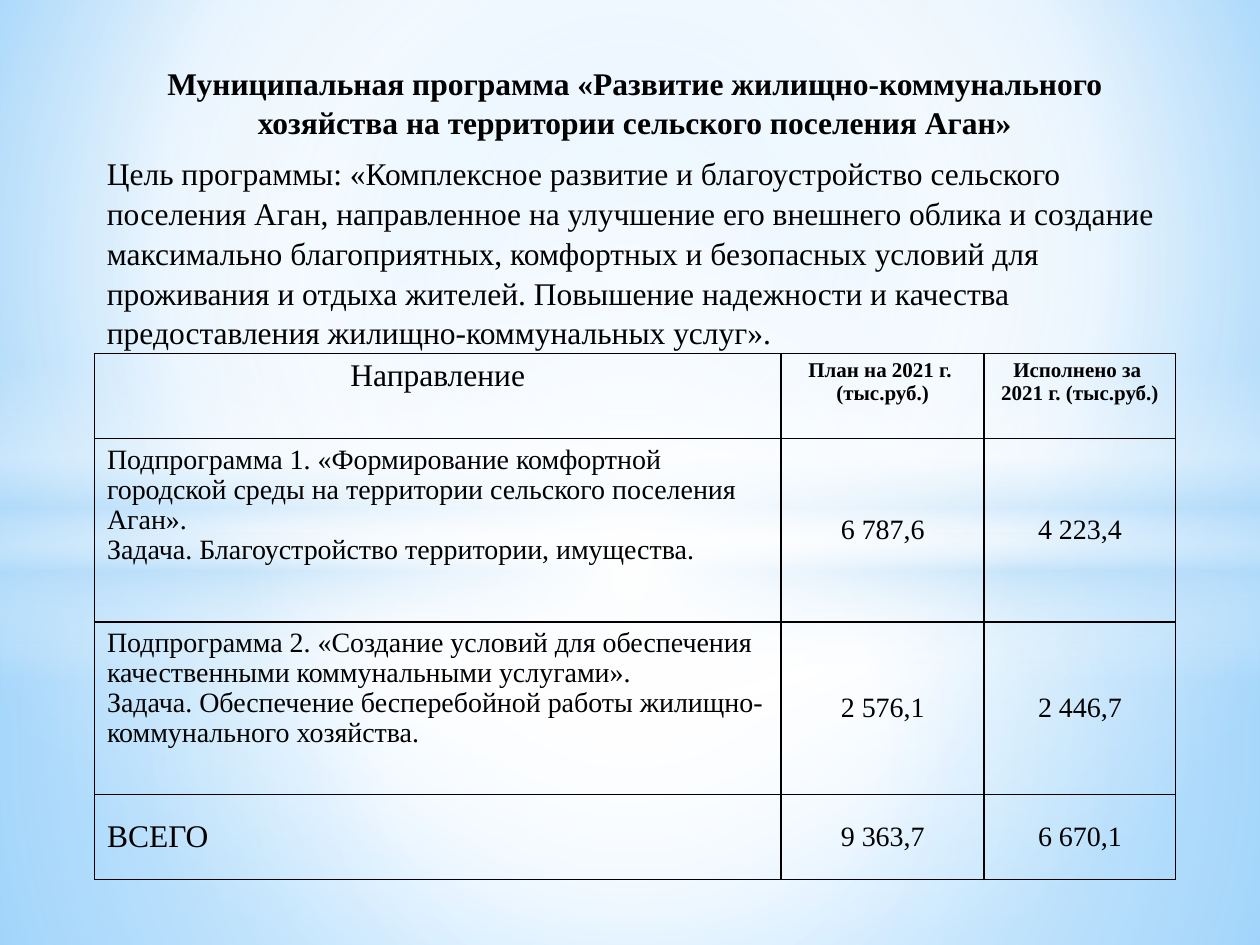
"""Builds the slide on the housing and utilities programme with its spending table."""
from lxml import etree
from pptx import Presentation
from pptx.dml.color import RGBColor
from pptx.enum.shapes import MSO_SHAPE
from pptx.enum.text import MSO_ANCHOR, PP_ALIGN
from pptx.oxml.ns import qn
from pptx.util import Pt

LEFT, CENTER = PP_ALIGN.LEFT, PP_ALIGN.CENTER
TOP, MIDDLE = MSO_ANCHOR.TOP, MSO_ANCHOR.MIDDLE
RECT, OVAL = MSO_SHAPE.RECTANGLE, MSO_SHAPE.OVAL
FONT, INK = "Times New Roman", "000000"

TITLE = ("Муниципальная программа «Развитие жилищно-коммунального хозяйства "
         "на территории сельского поселения Аган»")
GOAL = ("Цель программы: «Комплексное развитие и благоустройство сельского поселения Аган, "
        "направленное на улучшение его внешнего облика и создание максимально благоприятных, "
        "комфортных и безопасных условий для проживания и отдыха жителей. Повышение надежности "
        "и качества предоставления жилищно-коммунальных услуг».")

HEADER = [["Направление"],
          ["План на 2021 г. ", "(тыс.руб.)"],
          ["Исполнено за ", "2021 г. (тыс.руб.)"]]
PROGRAMMES = [
    [["Подпрограмма 1. «Формирование комфортной городской среды на территории "
      "сельского поселения Аган».",
      "Задача. Благоустройство территории, имущества."], ["6 787,6"], ["4 223,4"]],
    [["Подпрограмма 2. «Создание условий для обеспечения качественными "
      "коммунальными услугами».",
      "Задача. Обеспечение бесперебойной работы жилищно-коммунального хозяйства."],
     ["2 576,1"], ["2 446,7"]],
]
TOTAL = [["ВСЕГО"], ["9 363,7"], ["6 670,1"]]
ROWS = [HEADER, *PROGRAMMES, TOTAL]
COL_WIDTHS = [392.4, 116, 109.4]
ROW_HEIGHTS = [48.7, 104.6, 98.8, 48.4]

BACKGROUND = [(0, "9ED5FF", 100), (60, "FFFFFF", 100), (100, "5BB9FF", 100)]
MIDPOINT = (50, 50, 50, 50)
GLOWS = [
    (RECT, (0, 304.5, 720, 235.5),
     [(0, "FFFFFF", 91), (37, "FFFFFF", 76), (100, "B4DCFA", 79)], MIDPOINT),
    (RECT, (0, 0, 720, 304.5),
     [(0, "FFFFFF", 89), (48, "FFFFFF", 62), (100, "B4DCFA", 79)], MIDPOINT),
    (RECT, (0, 209, 720, 180),
     [(0, "FFFFFF", 0), (29, "FFFFFF", 30), (45, "B4DCFA", 40),
      (55, "FFFFFF", 26), (65, "B4DCFA", 60), (100, "FFFFFF", 0)], None),
    (OVAL, (0, 126, 720, 402), [(0, "FFFFFF", 100), (54, "FFFFFF", 0)], MIDPOINT),
]


def rgb(value):
    return RGBColor.from_string(value)


def sub(parent, tag, **attrs):
    return etree.SubElement(parent, qn(tag), {k: str(v) for k, v in attrs.items()})


def set_gradient(root, fill, stops, focus):
    fill.solid()
    solid = root.find(".//" + qn("a:solidFill"))
    grad = etree.Element(qn("a:gradFill"), rotWithShape="1")
    stop_list = sub(grad, "a:gsLst")
    for pos, color, alpha in stops:
        clr = sub(sub(stop_list, "a:gs", pos=pos * 1000), "a:srgbClr", val=color)
        if alpha < 100:
            sub(clr, "a:alpha", val=alpha * 1000)
    if focus:
        rect = {side: pct * 1000 for side, pct in zip("ltrb", focus)}
        sub(sub(grad, "a:path", path="circle"), "a:fillToRect", **rect)
    else:
        sub(grad, "a:lin", ang=90 * 60000, scaled=0)
    solid.getparent().replace(solid, grad)


def write(tf, texts, size, bold=False, align=LEFT, spacing=1.0):
    for i, text in enumerate(texts):
        p = tf.paragraphs[0] if i == 0 else tf.add_paragraph()
        p.alignment, p.line_spacing = align, spacing
        r = p.add_run()
        r.text = text
        r.font.name, r.font.size, r.font.bold = FONT, Pt(size), bold
        r.font.color.rgb = rgb(INK)


def set_borders(cell):
    tc_pr = cell._tc.get_or_add_tcPr()
    for tag in ("a:lnL", "a:lnR", "a:lnT", "a:lnB"):
        line = sub(tc_pr, tag, w=Pt(1))
        sub(sub(line, "a:solidFill"), "a:srgbClr", val=INK)


def add_glows(s):
    for kind, box, stops, focus in GLOWS:
        sp = s.shapes.add_shape(kind, *map(Pt, box))
        sp.shadow.inherit = False
        set_gradient(sp._element, sp.fill, stops, focus)
        sp.line.fill.background()


def add_intro(s):
    tf = s.shapes.add_textbox(Pt(54), Pt(31.7), Pt(617.8), Pt(165)).text_frame
    tf.word_wrap = True
    write(tf, [TITLE, GOAL], 18, spacing=1.05)
    for p in tf.paragraphs:
        p.space_before, p.space_after = Pt(3.6), Pt(3)
    heading = tf.paragraphs[0]
    heading.alignment = CENTER
    heading.runs[0].font.bold = True


def add_spending(s):
    table = s.shapes.add_table(len(ROWS), len(COL_WIDTHS), Pt(54), Pt(202),
                               Pt(sum(COL_WIDTHS)), Pt(sum(ROW_HEIGHTS))).table
    table.first_row = table.horz_banding = False
    for column, width in zip(table.columns, COL_WIDTHS):
        column.width = Pt(width)
    for i, (row, height) in enumerate(zip(ROWS, ROW_HEIGHTS)):
        table.rows[i].height = Pt(height)
        for j, texts in enumerate(row):
            cell = table.cell(i, j)
            header, label, total = row is HEADER, j == 0, row is TOTAL
            size = 18 if label and (header or total) else 12 if header else 16
            write(cell.text_frame, texts, size, header and not label,
                  CENTER if header or not label else LEFT, 0.97)
            cell.vertical_anchor = MIDDLE if total or not (header or label) else TOP
            set_borders(cell)
            cell.fill.background()


def main():
    prs = Presentation()
    prs.slide_width, prs.slide_height = Pt(720), Pt(540)
    s = prs.slides.add_slide(prs.slide_layouts[6])
    set_gradient(s._element, s.background.fill, BACKGROUND, (20, 10, 20, 60))
    add_glows(s)
    add_intro(s)
    add_spending(s)
    prs.save("out.pptx")


if __name__ == "__main__":
    main()
